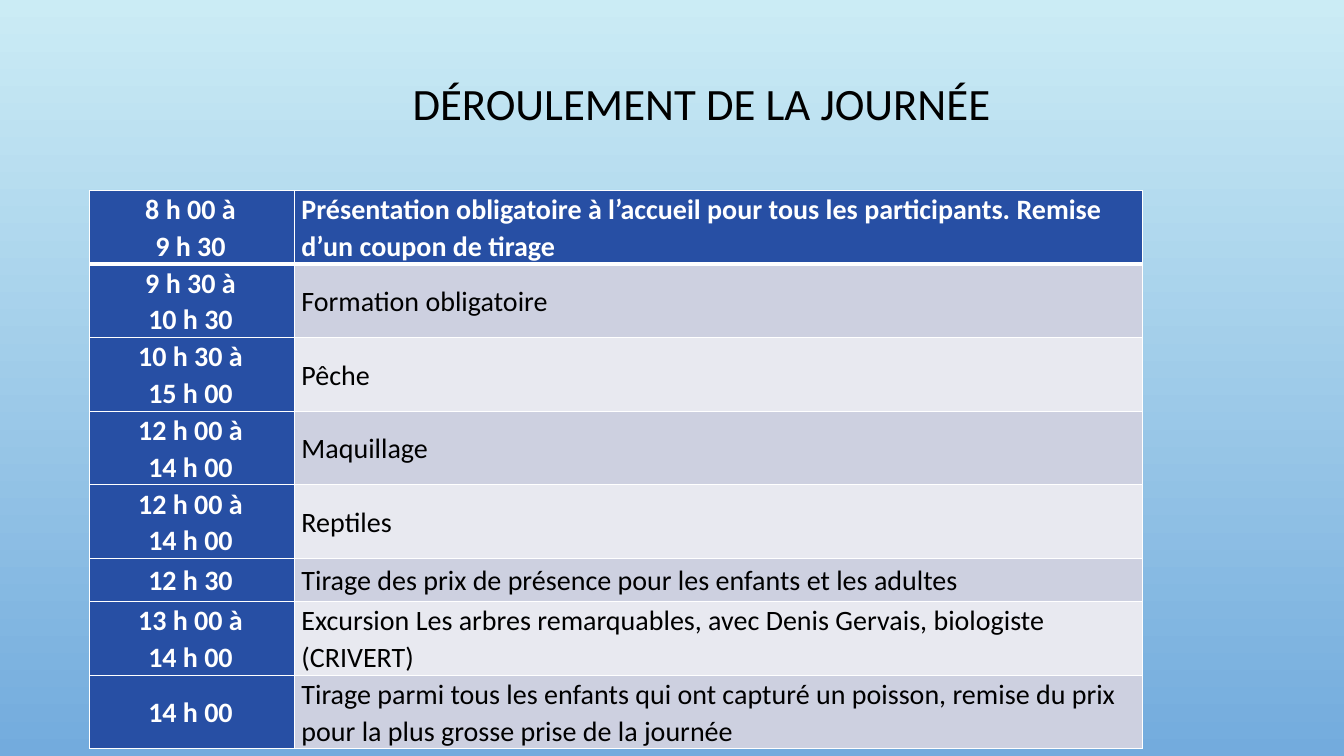
"""Build the slide that gives the schedule of the day."""
import pptx
import pptx.dml.color
import pptx.enum.text
import pptx.oxml
import pptx.oxml.ns
import pptx.util

TITLE = "DÉROULEMENT DE LA JOURNÉE"
SCHEDULE = [
    (["8 h 00 à", "9 h 30"],
     "Présentation obligatoire à l’accueil pour tous les participants. Remise d’un coupon de tirage"),
    (["9 h 30 à", "10 h 30"], "Formation obligatoire"),
    (["10 h 30 à", "15 h 00"], "Pêche"),
    (["12 h 00 à", "14 h 00"], "Maquillage"),
    (["12 h 00 à", "14 h 00"], "Reptiles"),
    (["12 h 30"], "Tirage des prix de présence pour les enfants et les adultes"),
    (["13 h 00 à", "14 h 00"],
     "Excursion Les arbres remarquables, avec Denis Gervais, biologiste (CRIVERT)"),
    (["14 h 00"],
     "Tirage parmi tous les enfants qui ont capturé un poisson, remise du prix pour la plus grosse prise de la journée"),
]
COLORS = {"sky": "CBECF5", "water": "73ABDD", "header": "274FA4", "odd": "CDD0E0",
          "even": "E8E9F0", "light": "FFFFFF", "dark": "000000"}
FONT = "Calibri"
COLUMNS = [2.03, 8.41]
TABLE_LEFT, TABLE_TOP = 0.89, 1.89
ONE_LINE, TWO_LINES, LINE_LENGTH = 0.43, 0.73, 70
THIN, THICK = 1, 3
ALIGN = pptx.enum.text.PP_ALIGN
ANCHOR = pptx.enum.text.MSO_ANCHOR
inches = pptx.util.Inches


def color(name):
    return pptx.dml.color.RGBColor.from_string(COLORS[name])


def set_all(target, values):
    for name, value in values.items():
        setattr(target, name, value)


def write(frame, lines, ink, size, bold, align, spacing):
    frame.word_wrap = True
    for index, line in enumerate(lines):
        para = frame.paragraphs[0] if index == 0 else frame.add_paragraph()
        set_all(para, {"alignment": align, "line_spacing": spacing})
        span = para.add_run()
        span.text = line
        set_all(span.font, {"name": FONT, "size": pptx.util.Pt(size), "bold": bold})
        span.font.color.rgb = color(ink)


def add_borders(cell, widths):
    properties = cell._tc.get_or_add_tcPr()
    for index, (side, width) in enumerate(widths.items()):
        properties.insert(index, pptx.oxml.parse_xml(
            f'<a:ln{side} {pptx.oxml.ns.nsdecls("a")} w="{pptx.util.Pt(width)}">'
            f'<a:solidFill><a:srgbClr val="{COLORS["light"]}"/></a:solidFill></a:ln{side}>'))


def add_background(page):
    fill = page.background.fill
    fill.gradient()
    fill.gradient_angle = 270
    for stop, position, name in zip(fill.gradient_stops, (0, 1), ("sky", "water")):
        stop.position = position
        stop.color.rgb = color(name)


def add_title(page):
    title = page.shapes.title
    set_all(title, {"left": inches(3.14), "top": inches(0.62),
                    "width": inches(7.64), "height": inches(0.72)})
    title.text_frame.vertical_anchor = ANCHOR.BOTTOM
    write(title.text_frame, [TITLE], "dark", 32, False, ALIGN.CENTER, 0.9)


def add_schedule(page):
    heights = [TWO_LINES if len(times) > 1 or len(activity) > LINE_LENGTH else ONE_LINE
               for times, activity in SCHEDULE]
    table = page.shapes.add_table(
        len(SCHEDULE), len(COLUMNS), inches(TABLE_LEFT), inches(TABLE_TOP),
        inches(sum(COLUMNS)), inches(sum(heights))).table
    for column, width in zip(table.columns, COLUMNS):
        column.width = inches(width)
    for row, (times, activity) in enumerate(SCHEDULE):
        table.rows[row].height = inches(heights[row])
        borders = {"L": THIN, "R": THIN, "T": THICK if row == 1 else THIN,
                   "B": THICK if row == 0 else THIN}
        for column, lines in enumerate((times, [activity])):
            cell = table.cell(row, column)
            strong = row == 0 or column == 0
            set_all(cell, {"vertical_anchor": ANCHOR.MIDDLE, "margin_left": inches(0.07),
                           "margin_right": inches(0.07 if column else 0.1),
                           "margin_top": 0, "margin_bottom": 0})
            cell.fill.solid()
            cell.fill.fore_color.rgb = color("header" if strong else ("even", "odd")[row % 2])
            add_borders(cell, borders)
            write(cell.text_frame, lines, "light" if strong else "dark", 20, strong,
                  ALIGN.LEFT if column else ALIGN.CENTER, 1.07)


def main():
    deck = pptx.Presentation()
    set_all(deck, {"slide_width": inches(13.33), "slide_height": inches(7.5)})
    page = deck.slides.add_slide(deck.slide_layouts[5])
    add_background(page)
    add_title(page)
    add_schedule(page)
    deck.save("out.pptx")


if __name__ == "__main__":
    main()
